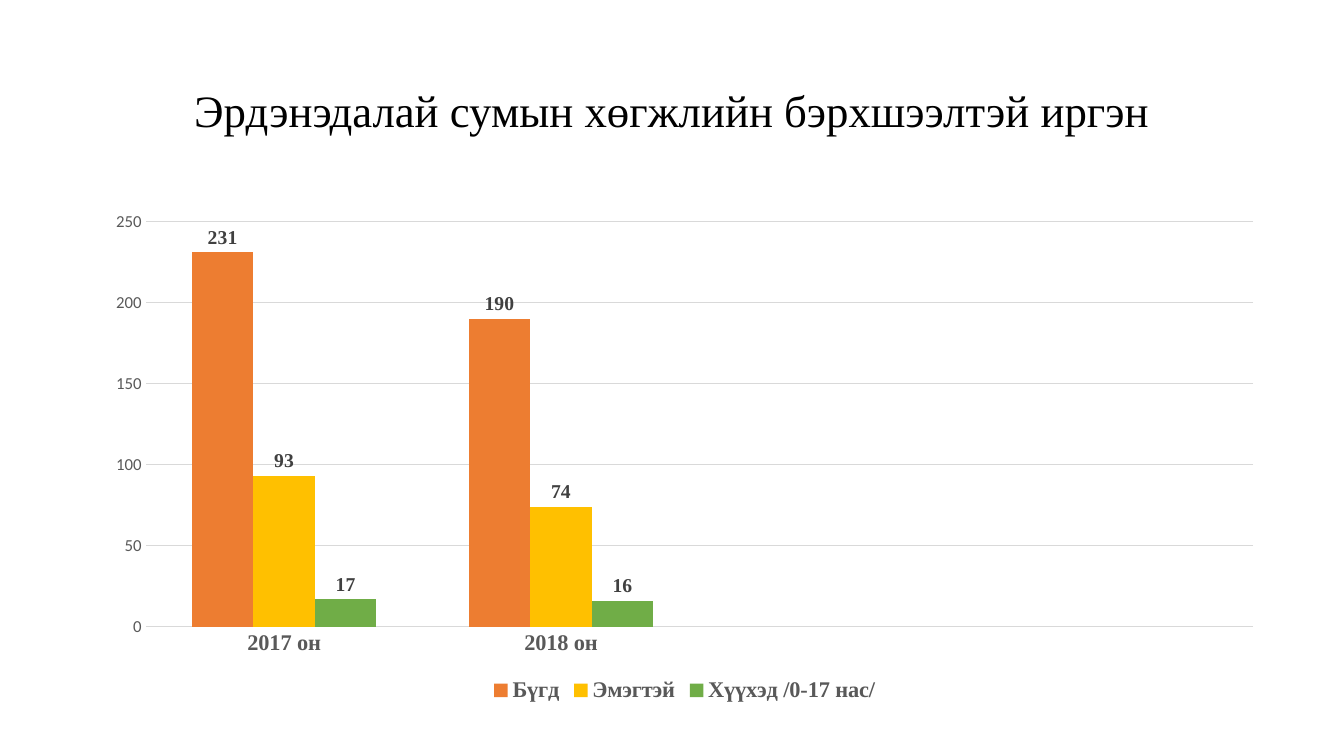
from dataclasses import dataclass

import pptx
import pptx.chart.data
import pptx.dml.color
import pptx.enum.chart
import pptx.enum.text
import pptx.util
from pptx.util import Cm

SERIF = "Times New Roman"
SANS = "Calibri"
GREY = "595959"


@dataclass(frozen=True)
class Group:
    name: str
    counts: tuple[int | None, ...]
    color: str


YEARS = ("2017 он", "2018 он", "", "")
GROUPS = (
    Group("Бүгд", (231, 190, None, None), "ED7D31"),
    Group("Эмэгтэй", (93, 74, None, None), "FFC000"),
    Group("Хүүхэд /0-17 нас/", (17, 16, None, None), "70AD47"),
)


def rgb(color: str) -> pptx.dml.color.RGBColor:
    return pptx.dml.color.RGBColor.from_string(color)


def style_font(font, size: float, color: str, name: str = SERIF, bold: bool = False) -> None:
    font.size = pptx.util.Pt(size)
    font.name = name
    font.bold = bold
    font.color.rgb = rgb(color)


def add_text(slide, text: str, *, left: float, top: float, width: float, height: float,
             size: float, color: str) -> None:
    box = slide.shapes.add_textbox(Cm(left), Cm(top), Cm(width), Cm(height))
    frame = box.text_frame
    frame.word_wrap = True
    frame.vertical_anchor = pptx.enum.text.MSO_ANCHOR.MIDDLE
    paragraph = frame.paragraphs[0]
    paragraph.alignment = pptx.enum.text.PP_ALIGN.CENTER
    paragraph.line_spacing = 0.9
    run = paragraph.add_run()
    run.text = text
    style_font(run.font, size, color)


def style_axis(axis, size: float, name: str, bold: bool) -> None:
    axis.major_tick_mark = pptx.enum.chart.XL_TICK_MARK.NONE
    axis.minor_tick_mark = pptx.enum.chart.XL_TICK_MARK.NONE
    axis.format.line.fill.background()
    style_font(axis.tick_labels.font, size, GREY, name, bold)


def style_group(series, group: Group) -> None:
    series.format.fill.solid()
    series.format.fill.fore_color.rgb = rgb(group.color)
    series.format.line.fill.background()
    series.invert_if_negative = False
    labels = series.data_labels
    labels.show_value = True
    labels.position = pptx.enum.chart.XL_LABEL_POSITION.OUTSIDE_END
    style_font(labels.font, 14, "404040", bold=True)


def add_population_chart(slide) -> None:
    population = pptx.chart.data.CategoryChartData()
    population.categories = YEARS
    for group in GROUPS:
        population.add_series(group.name, group.counts)
    chart = slide.shapes.add_chart(
        pptx.enum.chart.XL_CHART_TYPE.COLUMN_CLUSTERED,
        Cm(2.33), Cm(5.08), Cm(29.85), Cm(12.75), population,
    ).chart
    style_font(chart.font, 10, "000000", SANS)
    chart.has_title = False

    plot = chart.plots[0]
    plot.gap_width = 150
    plot.overlap = 0
    plot.vary_by_categories = False
    for series, group in zip(plot.series, GROUPS):
        style_group(series, group)

    style_axis(chart.category_axis, 16, SERIF, True)
    counts_axis = chart.value_axis
    style_axis(counts_axis, 12, SANS, False)
    counts_axis.minimum_scale = 0
    counts_axis.maximum_scale = 250
    counts_axis.major_unit = 50
    gridline = counts_axis.major_gridlines.format.line
    gridline.color.rgb = rgb("D9D9D9")
    gridline.width = pptx.util.Pt(0.75)

    chart.has_legend = True
    chart.legend.position = pptx.enum.chart.XL_LEGEND_POSITION.BOTTOM
    chart.legend.include_in_layout = False
    style_font(chart.legend.font, 16, GREY, bold=True)


def main() -> None:
    deck = pptx.Presentation()
    deck.slide_width = Cm(33.87)
    deck.slide_height = Cm(19.05)
    slide = deck.slides.add_slide(deck.slide_layouts[6])
    add_text(slide, "Эрдэнэдалай сумын хөгжлийн бэрхшээлтэй иргэн",
             left=2.33, top=1.01, width=29.21, height=3.68, size=32, color="000000")
    add_population_chart(slide)
    deck.save("out.pptx")


if __name__ == "__main__":
    main()
